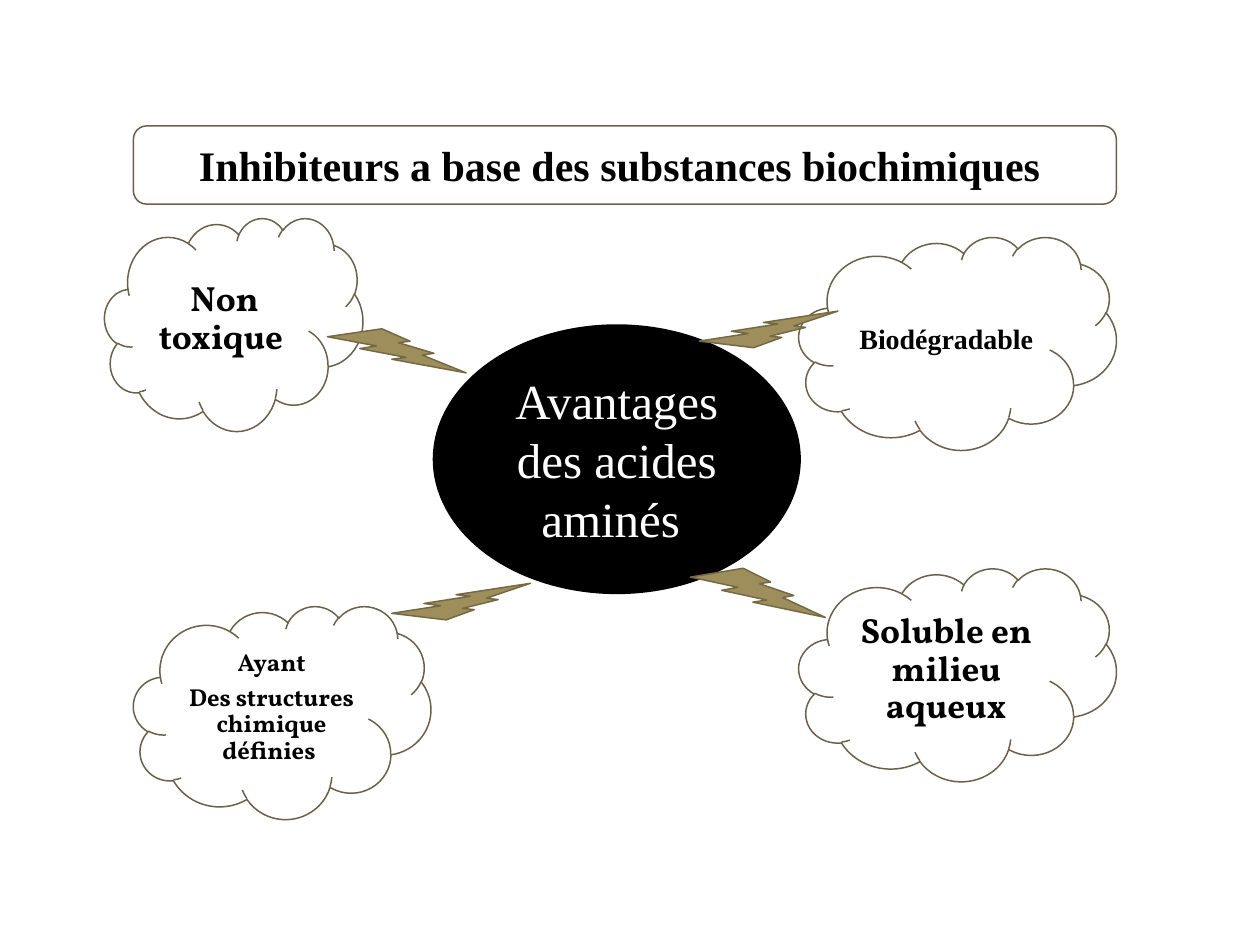
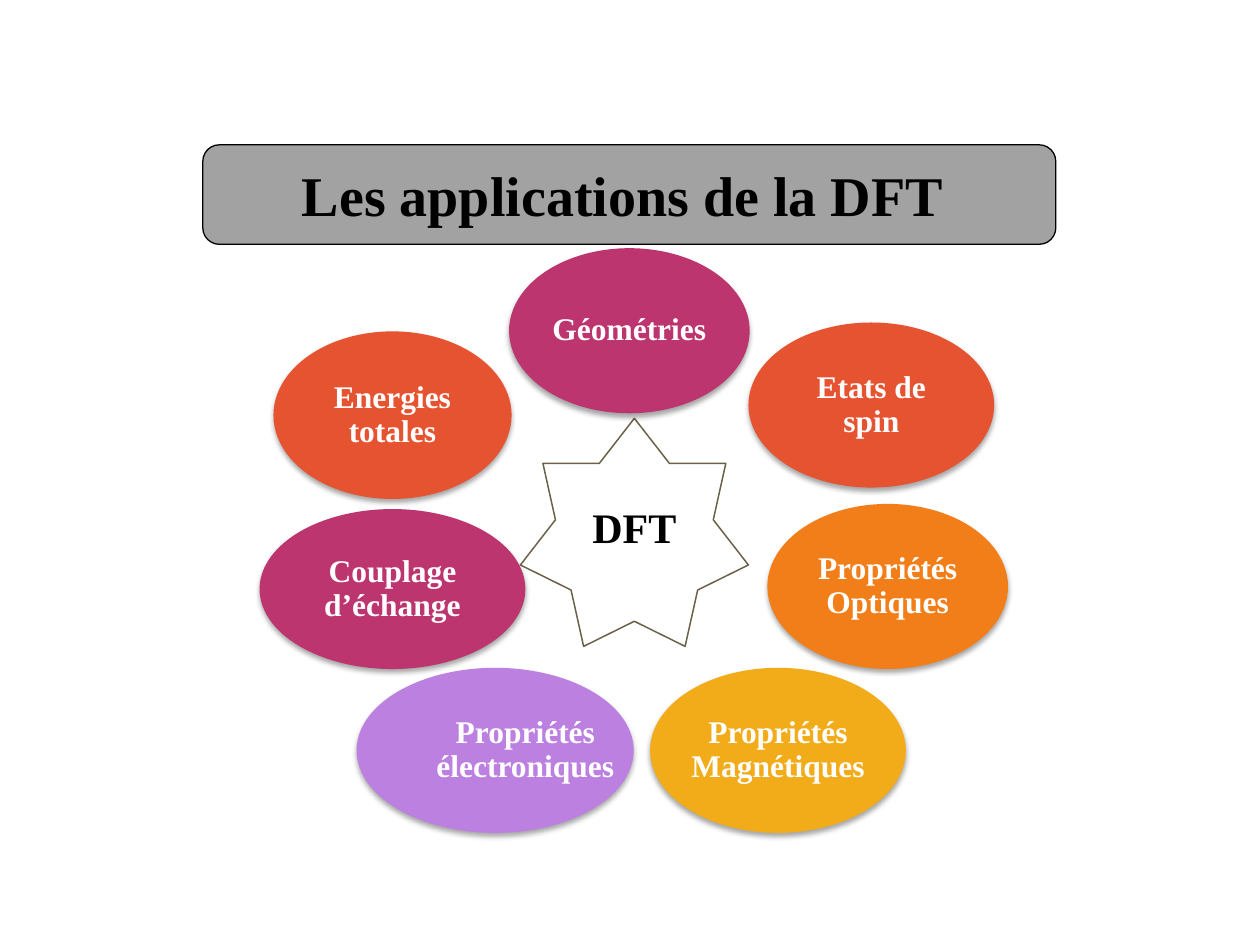
from dataclasses import dataclass
from lxml import etree
from pptx import Presentation
from pptx.dml.color import RGBColor
from pptx.enum.shapes import MSO_SHAPE
from pptx.enum.text import MSO_ANCHOR, PP_ALIGN
from pptx.oxml.ns import qn
from pptx.util import Inches, Pt

ROUNDED, OVAL, CLOUD = MSO_SHAPE.ROUNDED_RECTANGLE, MSO_SHAPE.OVAL, MSO_SHAPE.CLOUD
BOLT, STAR = MSO_SHAPE.LIGHTNING_BOLT, MSO_SHAPE.STAR_7_POINT
CENTER, MIDDLE = PP_ALIGN.CENTER, MSO_ANCHOR.MIDDLE


@dataclass(frozen=True)
class Theme:
    white: str = "FFFFFF"
    black: str = "000000"
    grey: str = "A2A2A2"
    outline: str = "6B6149"
    bolt: str = "9E8E5C"
    bolt_edge: str = "756944"
    magenta: str = "BC356F"
    red: str = "E65331"
    orange: str = "F27E19"
    lilac: str = "BC80E0"
    amber: str = "F2AC19"
    serif: str = "Times New Roman"
    display: str = "Vollkorn"
    hero: int = 32
    hub: int = 28
    heading: int = 24
    large: int = 20
    petal: int = 18
    medium: int = 16
    small: int = 14
    edge: float = 0.85
    thin_edge: float = 0.75


THEME = Theme()
SLIDE_W, SLIDE_H = 10, 7.5
CLOUD_H = 22.53
OVAL_INSET = 0.146

# Boxes are left, top, width, height in percent of the slide.
BENEFITS_TITLE = ("Inhibiteurs a base des substances biochimiques ", (10.6, 13.33, 78, 8.27))
BENEFITS_HUB = ("Avantages des acides aminés ", (34.4, 34.4, 29.1, 28.4))
BENEFITS = [
    (["Biodégradable"], (63.4, 25.07, 25.2), THEME.medium, THEME.serif),
    (["Non toxique "], (8.3, 23.07, 20.5), THEME.large, THEME.display),
    (["Ayant", "Des structures chimique définies "], (10.6, 64.13, 23.6), THEME.small, THEME.display),
    (["Soluble en milieu aqueux"], (63.4, 60.13, 25.2), THEME.large, THEME.display),
]
BOLTS = [
    ((26, 34.8, 11, 4.67), False),
    ((31.1, 61.73, 11, 3.87), True),
    ((55.5, 32.93, 11, 3.87), True),
    ((54.8, 60.13, 10.7, 5.2), False),
]

DFT_TITLE = ("Les applications de la DFT ", (16.1, 15.33, 67.7, 10.53))
DFT_HUB = ("DFT", (41.3, 44.27, 18.1, 24.13))
APPLICATIONS = [
    ("Géométries", THEME.magenta, (40.4, 26.27, 19.1, 17.47), 0),
    ("Etats de spin", THEME.red, (59.4, 34.13, 19.5, 17.47), 0),
    ("Propriétés Optiques", THEME.orange, (60.9, 53.33, 19.1, 17.47), 0),
    ("Energies totales", THEME.red, (21.7, 35.07, 18.9, 17.73), 0),
    ("Couplage d’échange", THEME.magenta, (20.6, 53.87, 21.1, 16.93), 0),
    ("Propriétés électroniques", THEME.lilac, (28.3, 70.67, 22, 17.47), 2.4),
    ("Propriétés Magnétiques", THEME.amber, (51.6, 70.67, 20.3, 17.47), 0),
]


def place(box):
    scales = (SLIDE_W, SLIDE_H, SLIDE_W, SLIDE_H)
    return [Inches(share * scale / 100) for share, scale in zip(box, scales)]


def draw(shapes, kind, box, fill, edge=None, edge_width=THEME.edge):
    shape = shapes.add_shape(kind, *place(box))
    shape.shadow.inherit = False
    shape.fill.solid()
    shape.fill.fore_color.rgb = RGBColor.from_string(fill)
    if edge:
        shape.line.color.rgb = RGBColor.from_string(edge)
        shape.line.width = Pt(edge_width)
    else:
        shape.line.fill.background()
    return shape


def write(holder, lines, size, font=THEME.serif, color=THEME.black, bold=True, tight=False):
    frame = holder.text_frame
    frame.word_wrap = True
    frame.vertical_anchor = MIDDLE
    for index, line in enumerate(lines):
        paragraph = frame.add_paragraph() if index else frame.paragraphs[0]
        paragraph.alignment = CENTER
        if tight:
            paragraph.line_spacing = 0.9
            paragraph.space_after = Pt(size * 0.35)
        run = paragraph.add_run()
        run.text = line
        run.font.size, run.font.name, run.font.bold = Pt(size), font, bold
        run.font.color.rgb = RGBColor.from_string(color)


def cast_shadow(shape):
    effects = shape.element.spPr.find(qn("a:effectLst"))
    shadow = etree.SubElement(effects, qn("a:outerShdw"), blurRad=str(Pt(3)),
                              dist=str(Pt(2)), dir="5400000", rotWithShape="0")
    color = etree.SubElement(shadow, qn("a:srgbClr"), val=THEME.black)
    etree.SubElement(color, qn("a:alpha"), val="35000")


def add_title(shapes, title, size, fill, edge, edge_width):
    text, box = title
    write(draw(shapes, ROUNDED, box, fill, edge, edge_width), [text], size)


def add_petal(shapes, label, color, box, shift):
    group = shapes.add_group_shape().shapes
    cast_shadow(draw(group, OVAL, box, color))
    left, top, width, height = box
    inner = 1 - 2 * OVAL_INSET
    caption = group.add_textbox(*place((left + width * OVAL_INSET + shift,
                                        top + height * OVAL_INSET,
                                        width * inner, height * inner)))
    frame = caption.text_frame
    frame.margin_left = frame.margin_right = Inches(0.03)
    frame.margin_top = frame.margin_bottom = Inches(0.03)
    write(caption, [label], THEME.petal, color=THEME.white, tight=True)


def build_benefits(shapes):
    add_title(shapes, BENEFITS_TITLE, THEME.heading, THEME.white, THEME.outline, THEME.edge)
    hub_text, hub_box = BENEFITS_HUB
    hub = draw(shapes, OVAL, hub_box, THEME.black, THEME.black)
    write(hub, [hub_text], THEME.hub, color=THEME.white, bold=False)
    for lines, spot, size, font in BENEFITS:
        cloud = draw(shapes, CLOUD, (*spot, CLOUD_H), THEME.white, THEME.outline)
        write(cloud, lines, size, font, tight=font == THEME.display)
    for box, flipped in BOLTS:
        bolt = draw(shapes, BOLT, box, THEME.bolt, THEME.bolt_edge)
        if flipped:
            bolt.element.spPr.find(qn("a:xfrm")).set("flipV", "1")


def build_applications(shapes):
    add_title(shapes, DFT_TITLE, THEME.hero, THEME.grey, THEME.black, THEME.thin_edge)
    hub_text, hub_box = DFT_HUB
    write(draw(shapes, STAR, hub_box, THEME.white, THEME.outline), [hub_text], THEME.heading)
    for application in APPLICATIONS:
        add_petal(shapes, *application)


def main():
    deck = Presentation()
    deck.slide_width, deck.slide_height = Inches(SLIDE_W), Inches(SLIDE_H)
    for build in (build_benefits, build_applications):
        build(deck.slides.add_slide(deck.slide_layouts[6]).shapes)
    deck.save("out.pptx")


if __name__ == "__main__":
    main()
